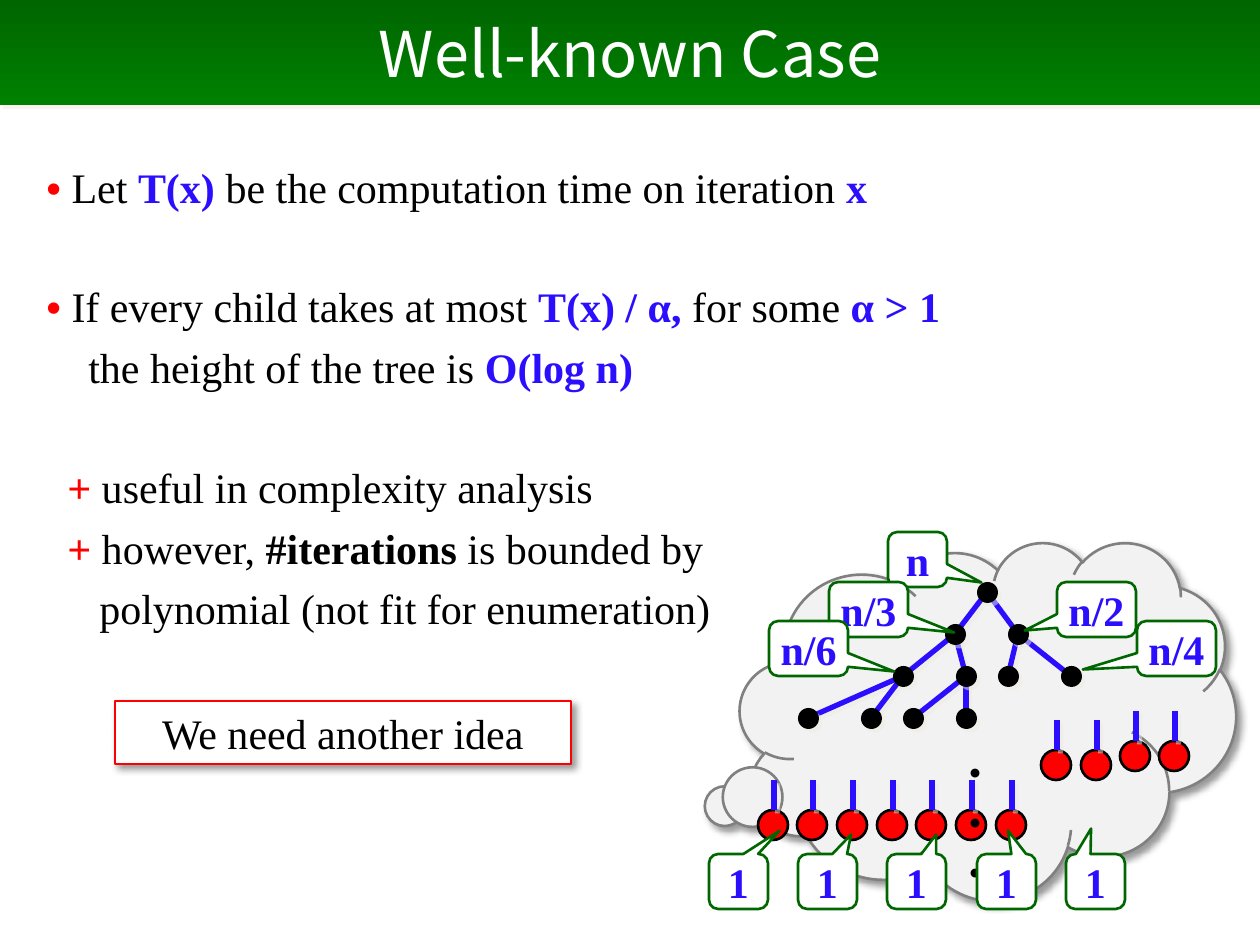
from lxml import etree
from pptx import Presentation
from pptx.dml.color import RGBColor
from pptx.enum.shapes import MSO_CONNECTOR, MSO_SHAPE as SHAPE
from pptx.enum.text import MSO_ANCHOR as ANCHOR, PP_ALIGN as ALIGN
from pptx.oxml.ns import qn
from pptx.util import Pt

PX = 914400 // 126
BLUE, RED, BLACK, WHITE, GREEN = "2B0EFE", "FF0000", "000000", "FFFFFF", "006600"
SOFT = ("EEECE1", 50, 0, 2.8)
DEEP = ("000000", 40, 4, 3)
color = RGBColor.from_string


def paint(shape, fill=None, line=None, width=1.5, shadow=None):
    if fill:
        shape.fill.solid()
        shape.fill.fore_color.rgb = color(fill)
    if line:
        shape.line.color.rgb = color(line)
        shape.line.width = Pt(width)
    else:
        shape.line.fill.background()
    effects = etree.SubElement(shape._element.spPr, qn("a:effectLst"))
    if shadow:
        tint, opacity, blur, distance = shadow
        outer = etree.SubElement(effects, qn("a:outerShdw"), blurRad=str(Pt(blur)),
                                 dist=str(Pt(distance)), dir="2700000",
                                 algn="ctr", rotWithShape="0")
        rgb = etree.SubElement(outer, qn("a:srgbClr"), val=tint)
        etree.SubElement(rgb, qn("a:alpha"), val=str(opacity * 1000))


def write(paragraph, text, ink, **changes):
    run = paragraph.add_run()
    run.text = text
    run.font.color.rgb = color(ink)
    look = {"name": "Times New Roman", "size": Pt(24), "bold": False, **changes}
    for key, value in look.items():
        setattr(run.font, key, value)


deck = Presentation()
deck.slide_width, deck.slide_height = 9144000, 6858000
slide = deck.slides.add_slide(deck.slide_layouts[6])
shapes = slide.shapes

cloud = shapes.add_shape(SHAPE.CLOUD_CALLOUT, 740 * PX, 542 * PX, 496 * PX, 358 * PX)
cloud.adjustments[0], cloud.adjustments[1] = -0.549, 0.246
paint(cloud, "F2F2F2", "808080", shadow=DEEP)

title = shapes.add_shape(SHAPE.RECTANGLE, 0, 0, deck.slide_width, 105 * PX)
title.fill.gradient()
title.fill.gradient_angle = 270
for stop, shade in zip(title.fill.gradient_stops, (GREEN, "008000")):
    stop.color.rgb = color(shade)
paint(title, shadow=SOFT)
title.text_frame.vertical_anchor = ANCHOR.MIDDLE
heading = title.text_frame.paragraphs[0]
heading.alignment = ALIGN.CENTER
write(heading, "Well-known Case", WHITE, name="Noto Sans CJK JP", size=Pt(36))

NEAR, FAR = 6, 39.5
points = [
    (0, NEAR, [("• ", RED, True), ("Let ", BLACK, False), ("T(x) ", BLUE, True),
               ("be the computation time on iteration ", BLACK, False), ("x", BLUE, True)]),
    (0, FAR, [("• ", RED, True), ("If every child takes at most ", BLACK, False),
              ("T(x) / α, ", BLUE, True), ("for some ", BLACK, False), ("α > 1", BLUE, True)]),
    (42, NEAR, [("the height of the tree is ", BLACK, False), ("O(log n)", BLUE, True)]),
    (21, FAR, [("+ ", RED, True), ("useful in complexity analysis", BLACK, False)]),
    (21, NEAR, [("+ ", RED, True), ("however, ", BLACK, False),
                ("#iterations ", BLACK, True), ("is bounded by", BLACK, False)]),
    (53, NEAR, [("polynomial (not fit for enumeration)", BLACK, False)]),
]
body = shapes.add_textbox(34 * PX, 155 * PX, 1160 * PX, 407 * PX).text_frame
body.word_wrap = True
for number, (indent, gap, pieces) in enumerate(points):
    point = body.add_paragraph() if number else body.paragraphs[0]
    point.space_before = Pt(gap)
    point._p.get_or_add_pPr().set("marL", str(indent * PX))
    for text, ink, bold in pieces:
        write(point, text, ink, bold=bold)

nodes = [(987, 592), (955, 634), (1018, 634), (903, 676), (966, 676), (1008, 676),
         (1071, 676), (808, 718), (871, 718), (913, 718), (966, 718)]
children = {0: (1, 2), 1: (3, 4), 2: (5, 6), 3: (7, 8), 4: (9, 10)}
edges = [nodes[parent] + nodes[child] for parent in children for child in children[parent]]

leaves = [(758 + 119 * i // 3, 810) for i in range(7)]
leaves += [(1041, 750), (1081, 750), (1120, 741), (1159, 741)]
stems = [(x + 16, y - 30, x + 16, y) for x, y in leaves]

for x, y in leaves:
    leaf = shapes.add_shape(SHAPE.OVAL, x * PX, y * PX, 30 * PX, 30 * PX)
    paint(leaf, RED, BLACK)
for ends in edges + stems:
    branch = shapes.add_connector(MSO_CONNECTOR.STRAIGHT, *(end * PX for end in ends))
    paint(branch, line=BLUE, width=3, shadow=SOFT)
for x, y in nodes:
    node = shapes.add_shape(SHAPE.OVAL, (x - 10) * PX, (y - 10) * PX, 21 * PX, 21 * PX)
    paint(node, BLACK, shadow=SOFT)

ellipsis = shapes.add_textbox(942 * PX, 741 * PX, 88 * PX, 64 * PX).text_frame
ellipsis.word_wrap = True
write(ellipsis.paragraphs[0], "・・・", BLACK)

sizes = [
    ("n", 888, 532, 59, 1.083, 0.418),
    ("n/3", 829, 582, 79, 1.083, 0.418),
    ("n/2", 1057, 582, 79, -0.908, 0.382),
    ("n/6", 769, 621, 79, 1.083, 0.418),
    ("n/4", 1137, 621, 79, -1.185, 0.382),
]
tips = [(0.7, -0.925), (0.401, -0.853), (0.333, -0.853), (0.025, -0.927), (-0.075, -0.962)]
sizes += [("1", 709 + 447 * i // 5, 854, 59, *tip) for i, tip in enumerate(tips)]
for text, x, y, width, tip_x, tip_y in sizes:
    size = shapes.add_shape(SHAPE.ROUNDED_RECTANGULAR_CALLOUT,
                            x * PX, y * PX, width * PX, 55 * PX)
    for index, value in enumerate((tip_x, tip_y, 0.167)):
        size.adjustments[index] = value
    paint(size, WHITE, GREEN)
    label = size.text_frame
    label.margin_left = label.margin_right = 0
    label.vertical_anchor = ANCHOR.MIDDLE
    label.paragraphs[0].alignment = ALIGN.CENTER
    write(label.paragraphs[0], text, BLUE, bold=True)

conclusion = shapes.add_shape(SHAPE.RECTANGLE, 115 * PX, 701 * PX, 456 * PX, 63 * PX)
paint(conclusion, WHITE, RED, shadow=DEEP)
conclusion.text_frame.vertical_anchor = ANCHOR.TOP
conclusion.text_frame.paragraphs[0].alignment = ALIGN.CENTER
write(conclusion.text_frame.paragraphs[0], "We need another idea", BLACK)

deck.save("out.pptx")
